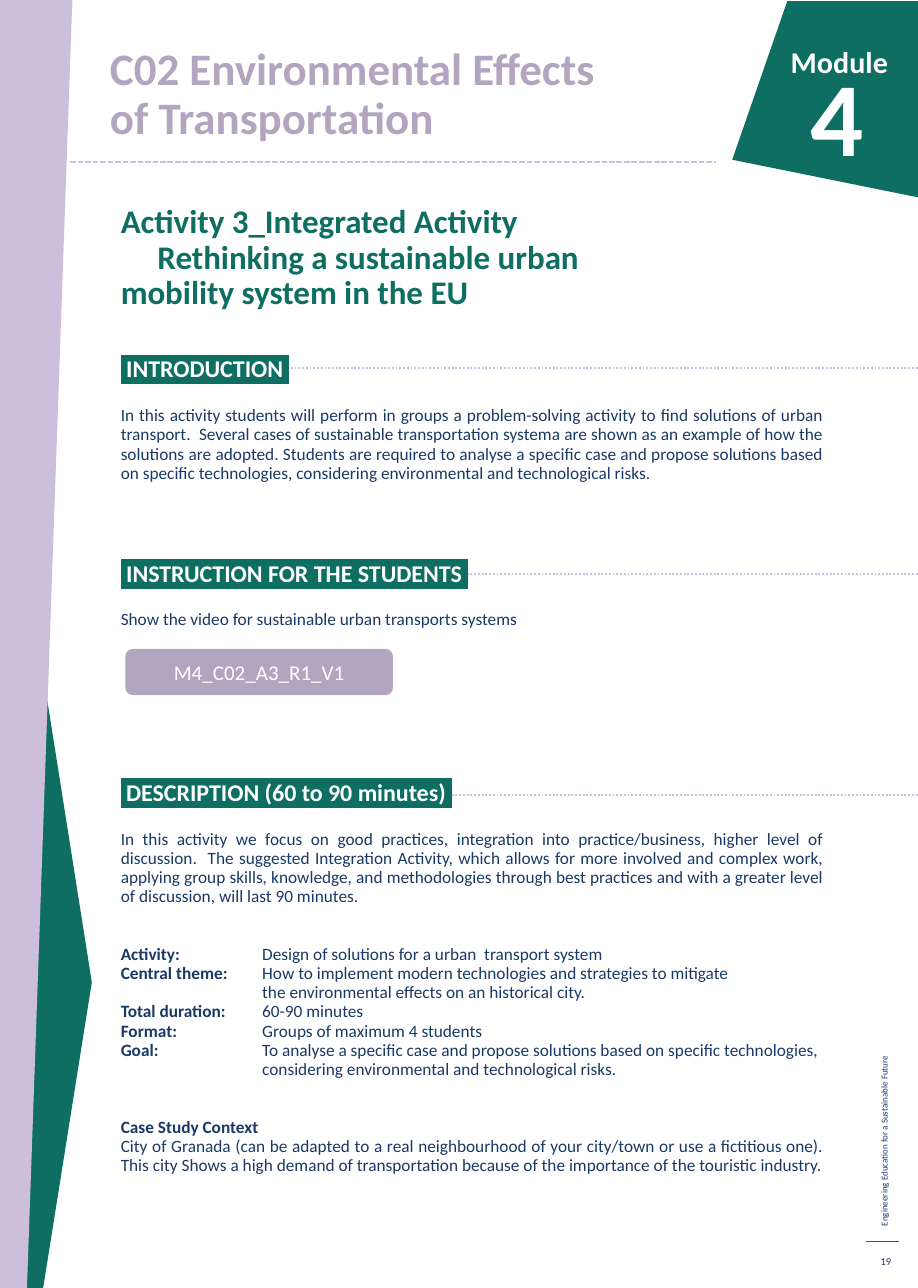
from dataclasses import dataclass

from lxml import etree
from pptx import Presentation
from pptx import util as u
from pptx.dml.color import RGBColor
from pptx.enum import dml, shapes, text
from pptx.oxml.ns import qn

GREEN = RGBColor(0x0E, 0x6E, 0x61)
LILAC = RGBColor(0xCE, 0xBE, 0xDD)
MAUVE = RGBColor(0xB3, 0xA5, 0xC0)
NAVY = RGBColor(0x1A, 0x39, 0x66)
WHITE = RGBColor(0xFF, 0xFF, 0xFF)
FONT = "Calibri"

LEFT, CENTER, RIGHT, JUSTIFY = (
    text.PP_ALIGN.LEFT, text.PP_ALIGN.CENTER, text.PP_ALIGN.RIGHT, text.PP_ALIGN.JUSTIFY)
TOP, MIDDLE, BOTTOM = (
    text.MSO_ANCHOR.TOP, text.MSO_ANCHOR.MIDDLE, text.MSO_ANCHOR.BOTTOM)

Point = tuple[float, float]


@dataclass
class Label:
    lines: list[str]
    box: tuple[float, float, float, float]
    size: float
    color: RGBColor
    bold: bool = False
    align: text.PP_ALIGN = LEFT
    anchor: text.MSO_ANCHOR = TOP
    spacing: float = 1.0
    rotation: float = 0


@dataclass
class Rule:
    start: Point
    end: Point
    color: RGBColor
    width: float
    dash: dml.MSO_LINE | None = None


@dataclass
class Heading:
    title: str
    before: float = 0


@dataclass
class Body:
    content: str
    before: float = 0
    bold: bool = False


@dataclass
class Row:
    term: str
    detail: str
    before: float = 0


OUTLINES = [
    ([(0.4, 11.93), (0.23, 11.93), (0.23, 5.17), (0.83, 8.97), (0.85, 9.1)], GREEN),
    ([(0, 0), (0.67, 0), (0.25, 11.93), (0, 11.93)], LILAC),
    ([(8.53, 0.01), (7.29, 0.01), (6.78, 1.48), (8.51, 1.83)], GREEN),
]

RULES = [
    Rule((8.02, 11.5), (8.32, 11.5), GREEN, 0.75),
    Rule((0.65, 1.5), (6.63, 1.5), LILAC, 1.25, dml.MSO_LINE.SQUARE_DOT),
    *(Rule((2.52, y), (8.5, y), LILAC, 1.25, dml.MSO_LINE.ROUND_DOT)
      for y in (3.41, 5.32, 7.36)),
]

LABELS = [
    Label(["Engineering Education for a Sustainable Future"],
          (5.94, 9.11, 4.49, 0.2), 6, NAVY, rotation=270),
    Label(["19"], (8.02, 11.54, 0.33, 0.29), 7, NAVY, align=RIGHT, anchor=MIDDLE),
    Label(["C02 Environmental Effects", "of Transportation"],
          (0.92, 0.28, 5.99, 1.1), 30, MAUVE, True, anchor=BOTTOM, spacing=0.89),
    Label(["Module"], (6.52, 0.35, 1.8, 1.42), 20, WHITE, True, RIGHT),
    Label(["4"], (6.3, 0.43, 1.8, 1.42), 70, WHITE, True, RIGHT),
]

ACTIVITY = Label(
    ["Activity 3_Integrated Activity",
     "Rethinking a sustainable urban mobility system in the EU"],
    (1.02, 1.85, 5.07, 1.05), 22, GREEN, True, spacing=0.9)

CONTENT = [
    Heading("INTRODUCTION"),
    Body("In this activity students will perform in groups a problem-solving activity to find "
         "solutions of urban transport.  Several cases of sustainable transportation systema are "
         "shown as an example of how the solutions are adopted. Students are required to analyse "
         "a specific case and propose solutions based on specific technologies, considering "
         "environmental and technological risks.", 15.6),
    Heading("INSTRUCTION FOR THE STUDENTS", 54),
    Body("Show the video for sustainable urban transports systems", 15.6),
    Heading("DESCRIPTION (60 to 90 minutes)", 102.4),
    Body("In this activity we focus on good practices, integration into practice/business, higher "
         "level of discussion.  The suggested Integration Activity, which allows for more involved "
         "and complex work, applying group skills, knowledge, and methodologies through best "
         "practices and with a greater level of discussion, will last 90 minutes.", 15.6),
    Row("Activity:", "Design of solutions for a urban  transport system", 25.6),
    Row("Central theme:", "How to implement modern technologies and strategies to mitigate"),
    Row("", "the environmental effects on an historical city."),
    Row("Total duration:", "60-90 minutes"),
    Row("Format:", "Groups of maximum 4 students"),
    Row("Goal:", "To analyse a specific case and propose solutions based on specific technologies,"),
    Row("", "considering environmental and technological risks."),
    Body("Case Study Context", 25.6, True),
    Body("City of Granada (can be adapted to a real neighbourhood of your city/town or use a "
         "fictitious one). This city Shows a high demand of transportation because of the "
         "importance of the touristic industry."),
]


def style(r, size: float, color: RGBColor, bold: bool = False) -> None:
    r.font.name = FONT
    r.font.size = u.Pt(size)
    r.font.bold = bold
    r.font.color.rgb = color


def highlight(r, color: RGBColor) -> None:
    mark = etree.Element(qn("a:highlight"))
    etree.SubElement(mark, qn("a:srgbClr"), val=str(color))
    r.font.fill  # the text fill precedes the highlight
    r._r.get_or_add_rPr().find(qn("a:solidFill")).addnext(mark)


def add_box(s, box: tuple[float, float, float, float]):
    sp = s.shapes.add_textbox(*map(u.Inches, box))
    sp.text_frame.word_wrap = True
    return sp


def add_label(s, label: Label):
    sp = add_box(s, label.box)
    sp.rotation = label.rotation
    tf = sp.text_frame
    tf.vertical_anchor = label.anchor
    tf.text = "\n".join(label.lines)
    for p in tf.paragraphs:
        p.alignment = label.align
        p.line_spacing = label.spacing
        style(p.runs[0], label.size, label.color, label.bold)
    return sp


def add_outline(s, points: list[Point], color: RGBColor) -> None:
    corners = [(u.Inches(x), u.Inches(y)) for x, y in points]
    builder = s.shapes.build_freeform(*corners[0])
    builder.add_line_segments(corners[1:], close=True)
    sp = builder.convert_to_shape()
    sp.shadow.inherit = False
    sp.fill.solid()
    sp.fill.fore_color.rgb = color
    sp.line.fill.background()


def add_rule(s, rule: Rule) -> None:
    line = s.shapes.add_connector(
        shapes.MSO_CONNECTOR.STRAIGHT, *map(u.Inches, rule.start + rule.end))
    line.line.color.rgb = rule.color
    line.line.width = u.Pt(rule.width)
    if rule.dash:
        line.line.dash_style = rule.dash
    etree.SubElement(line._element.spPr, qn("a:effectLst"))


def add_content(s, items: list[Heading | Body | Row]) -> None:
    tf = add_box(s, (1.02, 3.28, 6.7, 2.22)).text_frame
    for i, item in enumerate(items):
        p = tf.add_paragraph() if i else tf.paragraphs[0]
        p.alignment = JUSTIFY
        p.space_before = u.Pt(item.before)
        p.line_spacing = 0.8 if isinstance(item, Heading) else u.Pt(12.8)
        if isinstance(item, Heading):
            p.text = f" {item.title} "
            style(p.runs[0], 16, WHITE, True)
            highlight(p.runs[0], GREEN)
        elif isinstance(item, Body):
            p.text = item.content
            style(p.runs[0], 11.5, NAVY, item.bold)
        else:
            tabs = etree.SubElement(p._p.get_or_add_pPr(), qn("a:tabLst"))
            etree.SubElement(tabs, qn("a:tab"), pos=str(u.Inches(1.31)), algn="l")
            for words, bold in ((f"{item.term}\t", True), (item.detail, False)):
                r = p.add_run()
                r.text = words
                style(r, 11.5, NAVY, bold)


def add_video_button(s) -> None:
    sp = s.shapes.add_shape(
        shapes.MSO_SHAPE.ROUNDED_RECTANGLE, *map(u.Inches, (1.16, 6.01, 2.48, 0.43)))
    sp.shadow.inherit = False
    sp.fill.solid()
    sp.fill.fore_color.rgb = MAUVE
    sp.line.fill.background()
    tf = sp.text_frame
    tf.vertical_anchor = MIDDLE
    tf.text = "M4_C02_A3_R1_V1"
    tf.paragraphs[0].alignment = CENTER
    style(tf.paragraphs[0].runs[0], 14, WHITE)


def main() -> None:
    prs = Presentation()
    prs.slide_width, prs.slide_height = u.Inches(8.5), u.Inches(11.93)
    s = prs.slides.add_slide(prs.slide_layouts[6])
    for points, color in OUTLINES:
        add_outline(s, points, color)
    for rule in RULES:
        add_rule(s, rule)
    for label in LABELS:
        add_label(s, label)
    subtitle = add_label(s, ACTIVITY).text_frame.paragraphs[1]
    subtitle._p.get_or_add_pPr().set("indent", str(u.Inches(0.34)))
    add_content(s, CONTENT)
    add_video_button(s)
    prs.save("out.pptx")


if __name__ == "__main__":
    main()
